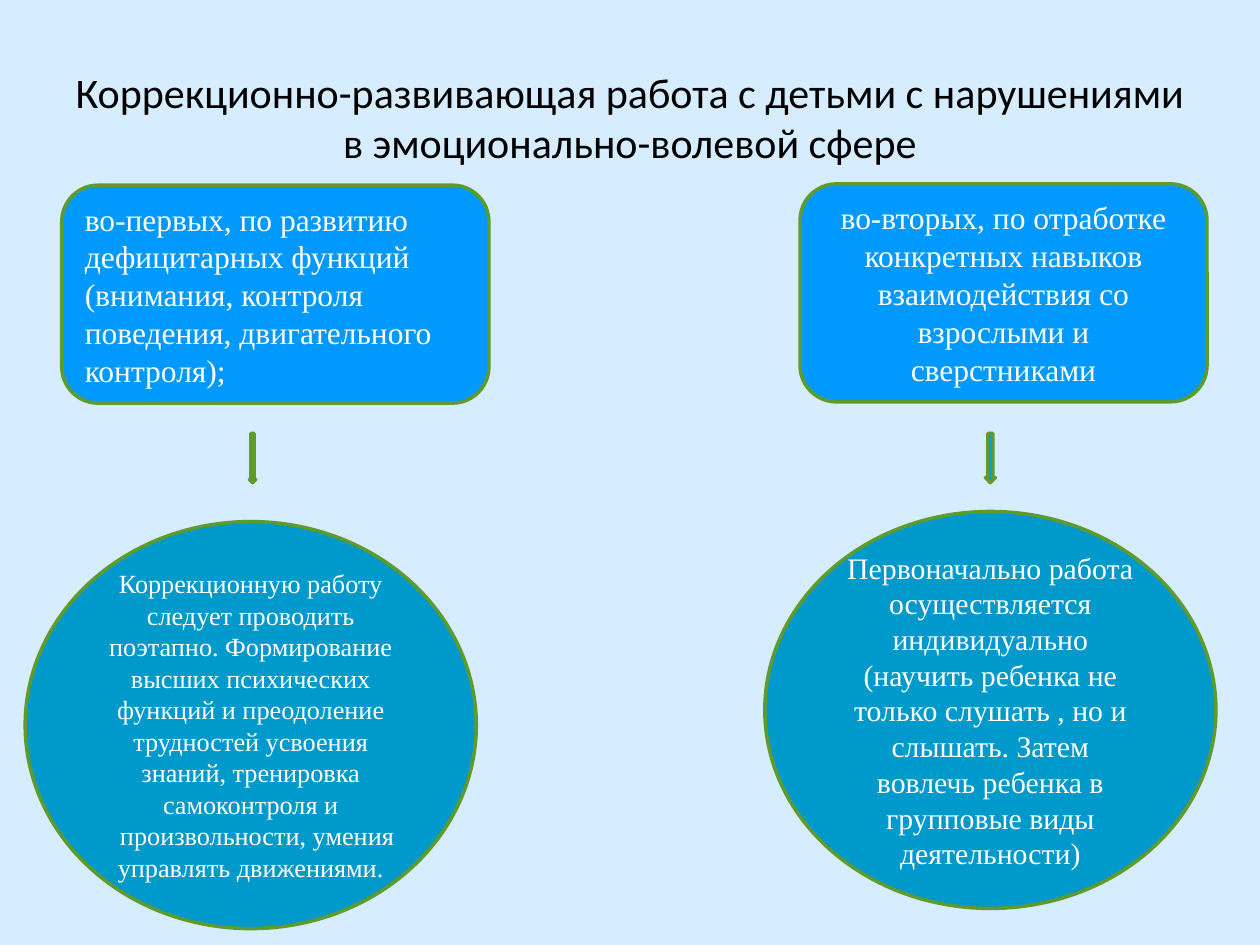
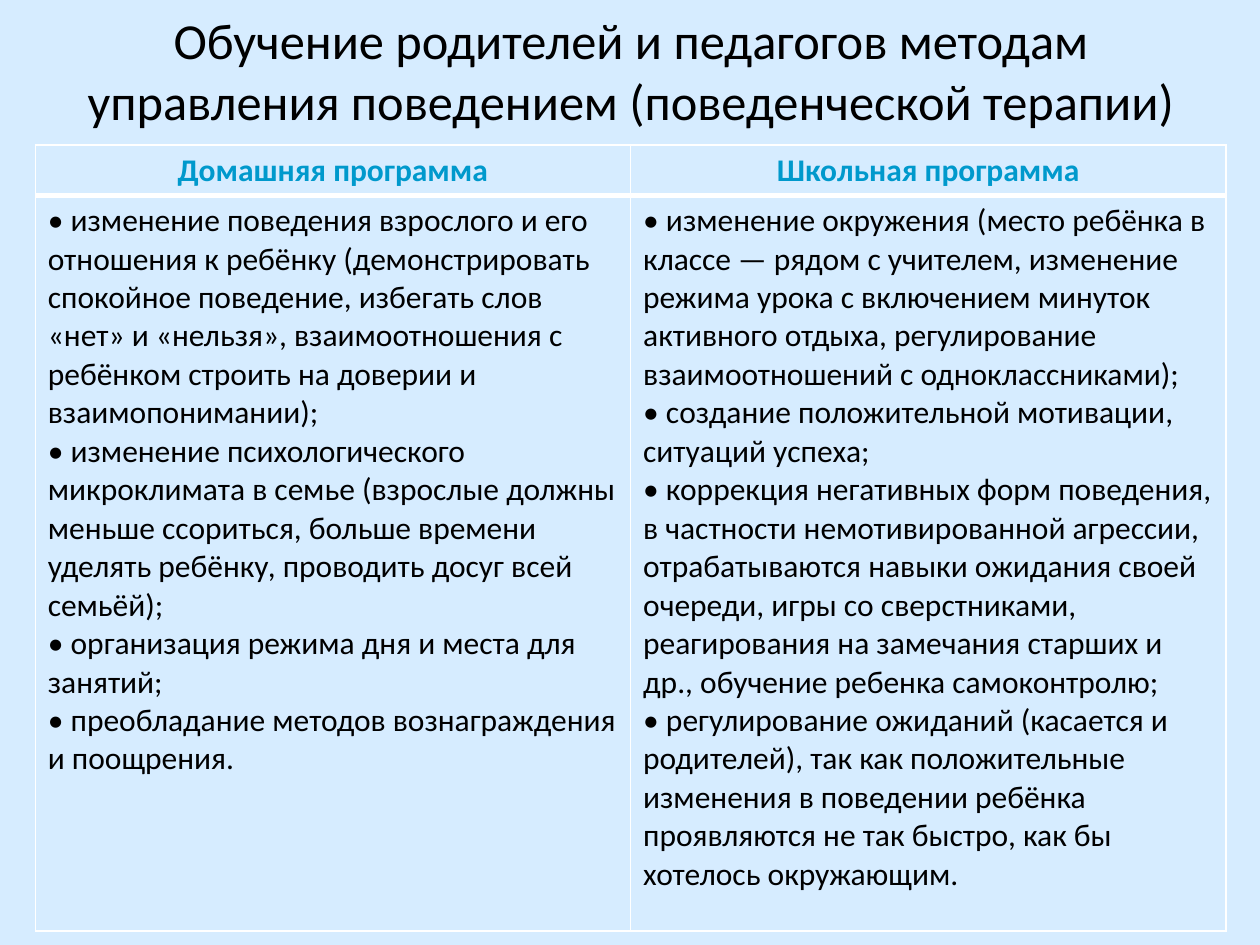
"""Builds two slides on correctional work and behaviour programmes for children."""
from dataclasses import dataclass

from lxml import etree
from pptx import Presentation
from pptx.dml.color import RGBColor
from pptx.enum.shapes import MSO_SHAPE
from pptx.enum.text import MSO_ANCHOR, PP_ALIGN
from pptx.oxml.ns import qn
from pptx.util import Inches, Pt

ROUNDED = MSO_SHAPE.ROUNDED_RECTANGLE
OVAL = MSO_SHAPE.OVAL
DOWN_ARROW = MSO_SHAPE.DOWN_ARROW
LEFT, CENTER = PP_ALIGN.LEFT, PP_ALIGN.CENTER
MIDDLE = MSO_ANCHOR.MIDDLE


@dataclass(frozen=True)
class Theme:
    """Colours, fonts and type sizes shared by the slides."""
    background: str = "D6ECFF"
    direction: str = "0099FF"
    accent: str = "0099CC"
    outline: str = "5E9B2C"
    light: str = "FFFFFF"
    dark: str = "000000"
    heading_font: str = "Calibri"
    shape_font: str = "Times New Roman"
    body_size: float = 18
    stages_size: float = 15
    practice_size: float = 17
    title_size: float = 24
    large_title_size: float = 28.8
    outline_width: float = 2
    grid_width: float = 1
    header_rule_width: float = 3


class SlideBuilder:
    """Adds styled elements to the current slide."""

    def __init__(self, deck, theme):
        self.deck = deck
        self.theme = theme
        self.slide = None

    def new_slide(self):
        """Start a blank slide with the shared background."""
        self.slide = self.deck.slides.add_slide(self.deck.slide_layouts[6])
        self.paint(self.slide.background.fill, self.theme.background)

    def paint(self, fill, color):
        """Fill with a solid colour, or leave clear when there is none."""
        if color is None:
            fill.background()
        else:
            fill.solid()
            fill.fore_color.rgb = RGBColor.from_string(color)

    def add_text(self, frame, paragraphs, color, align=CENTER, **formats):
        """Put the paragraphs into a text frame in one format."""
        for index, text in enumerate(paragraphs):
            para = frame.paragraphs[0] if index == 0 else frame.add_paragraph()
            para.alignment = align
            span = para.add_run()
            span.text = text
            for name, value in formats.items():
                setattr(span.font, name, value)
            span.font.color.rgb = RGBColor.from_string(color)

    def title(self, text, place, size):
        """Add a centred slide title."""
        box = self.slide.shapes.add_textbox(*map(Inches, place))
        box.text_frame.word_wrap = True
        box.text_frame.vertical_anchor = MIDDLE
        self.add_text(box.text_frame, [text], self.theme.dark,
                      name=self.theme.heading_font, size=Pt(size))

    def shape(self, kind, place, fill, paragraphs=(), size=18, align=CENTER):
        """Add an outlined preset shape with optional text."""
        shape = self.slide.shapes.add_shape(kind, *map(Inches, place))
        shape.shadow.inherit = False
        self.paint(shape.fill, fill)
        self.paint(shape.line.fill, self.theme.outline)
        shape.line.width = Pt(self.theme.outline_width)
        shape.text_frame.word_wrap = True
        shape.text_frame.vertical_anchor = MIDDLE
        self.add_text(shape.text_frame, paragraphs, self.theme.light, align,
                      name=self.theme.shape_font, size=Pt(size))
        return shape

    def indent_first_line(self, para, length):
        """Indent the first line of a paragraph."""
        properties = para._p.get_or_add_pPr()
        properties.set("marL", "0")
        properties.set("indent", str(Inches(length)))

    def borders(self, cell, widths):
        """Draw the cell borders given as a width per side."""
        properties = cell._tc.get_or_add_tcPr()
        for index, (side, width) in enumerate(widths.items()):
            line = etree.Element(qn(f"a:ln{side}"), w=str(Pt(width)))
            fill = etree.SubElement(line, qn("a:solidFill"))
            etree.SubElement(fill, qn("a:srgbClr"), val=self.theme.light)
            properties.insert(index, line)

    def table(self, place, row_heights, programs):
        """Add a table with one column per program, header above its measures."""
        theme = self.theme
        table = self.slide.shapes.add_table(
            len(row_heights), len(programs), *map(Inches, place)).table
        table.horz_banding = False
        for row, height in zip(table.rows, row_heights):
            row.height = Inches(height)
        grid = dict.fromkeys("LRTB", theme.grid_width)
        header_grid = {**grid, "B": theme.header_rule_width}
        body_grid = {**grid, "T": theme.header_rule_width}
        for column, (heading, measures) in enumerate(programs.items()):
            rows = (([heading], theme.accent, CENTER, True, header_grid),
                    (measures, theme.dark, LEFT, False, body_grid))
            for row, (paragraphs, color, align, bold, widths) in enumerate(rows):
                cell = table.cell(row, column)
                cell.fill.background()
                self.borders(cell, widths)
                self.add_text(cell.text_frame, paragraphs, color, align, bold=bold,
                              name=theme.heading_font, size=Pt(theme.body_size))


def build_directions(builder):
    """Show the two directions of correctional work and how each is done."""
    theme = builder.theme
    builder.new_slide()
    builder.title("Коррекционно-развивающая работа с детьми с нарушениями "
                  "в эмоционально-волевой сфере", (0.5, 0.3, 9, 1.25), theme.title_size)
    builder.shape(ROUNDED, (0.49, 1.47, 3.39, 1.73), theme.direction, [
        "во-первых, по развитию дефицитарных функций (внимания, контроля "
        "поведения, двигательного контроля);"], theme.body_size, LEFT)
    builder.shape(ROUNDED, (6.35, 1.46, 3.23, 1.73), theme.direction, [
        "во-вторых, по отработке конкретных навыков взаимодействия "
        "со взрослыми и сверстниками"], theme.body_size)
    stages = builder.shape(OVAL, (0.2, 4.14, 3.58, 3.23), theme.accent, [
        "Коррекционную работу следует проводить поэтапно. Формирование высших "
        "психических функций и преодоление трудностей усвоения знаний, "
        "тренировка самоконтроля и",
        "произвольности, умения управлять движениями."], theme.stages_size)
    builder.indent_first_line(stages.text_frame.paragraphs[1], 0.1)
    builder.shape(OVAL, (6.07, 4.06, 3.58, 3.15), theme.accent, [
        "Первоначально работа осуществляется индивидуально (научить ребенка "
        "не только слушать , но и слышать. Затем вовлечь ребенка "
        "в групповые виды деятельности)"], theme.practice_size)
    for left, width, fill in ((1.98, 0.05, None), (7.82, 0.08, theme.accent)):
        builder.shape(DOWN_ARROW, (left, 3.44, width, 0.39), fill)


def build_programs(builder):
    """Compare the home and school programmes in a table."""
    builder.new_slide()
    builder.title("Обучение родителей и педагогов методам управления поведением "
                  "(поведенческой терапии)", (0.51, 0.13, 9, 0.85),
                  builder.theme.large_title_size)
    builder.table((0.28, 1.15, 9.45, 6.22), (0.38, 5.84), {
        "Домашняя программа": [
            "• изменение поведения взрослого и его отношения к ребёнку "
            "(демонстрировать спокойное поведение, избегать слов «нет» и «нельзя», "
            "взаимоотношения с ребёнком строить на доверии и взаимопонимании);",
            "• изменение психологического микроклимата в семье (взрослые должны "
            "меньше ссориться, больше времени уделять ребёнку, "
            "проводить досуг всей семьёй);",
            "• организация режима дня и места для занятий;",
            "• преобладание методов вознаграждения и поощрения."],
        "Школьная программа": [
            "• изменение окружения (место ребёнка в классе — рядом с учителем, "
            "изменение режима урока с включением минуток активного отдыха, "
            "регулирование взаимоотношений с одноклассниками);",
            "• создание положительной мотивации, ситуаций успеха;",
            "• коррекция негативных форм поведения, в частности немотивированной "
            "агрессии, отрабатываются навыки ожидания своей очереди, игры "
            "со сверстниками, реагирования на замечания старших и др., "
            "обучение ребенка самоконтролю;",
            "• регулирование ожиданий (касается и родителей), так как "
            "положительные изменения в поведении ребёнка проявляются "
            "не так быстро, как бы хотелось окружающим."]})


def main():
    """Build and save the deck."""
    deck = Presentation()
    deck.slide_width, deck.slide_height = Inches(10), Inches(7.5)
    builder = SlideBuilder(deck, Theme())
    build_directions(builder)
    build_programs(builder)
    deck.save("out.pptx")


if __name__ == "__main__":
    main()
